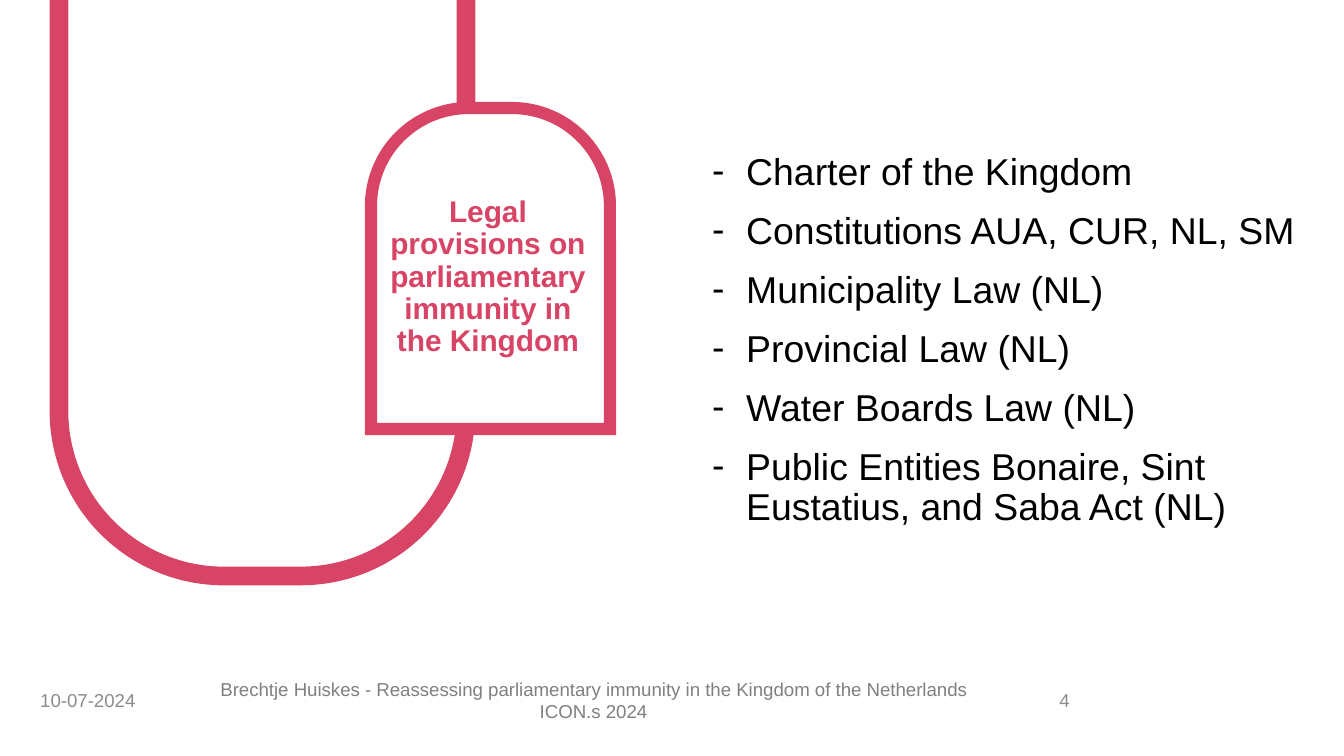
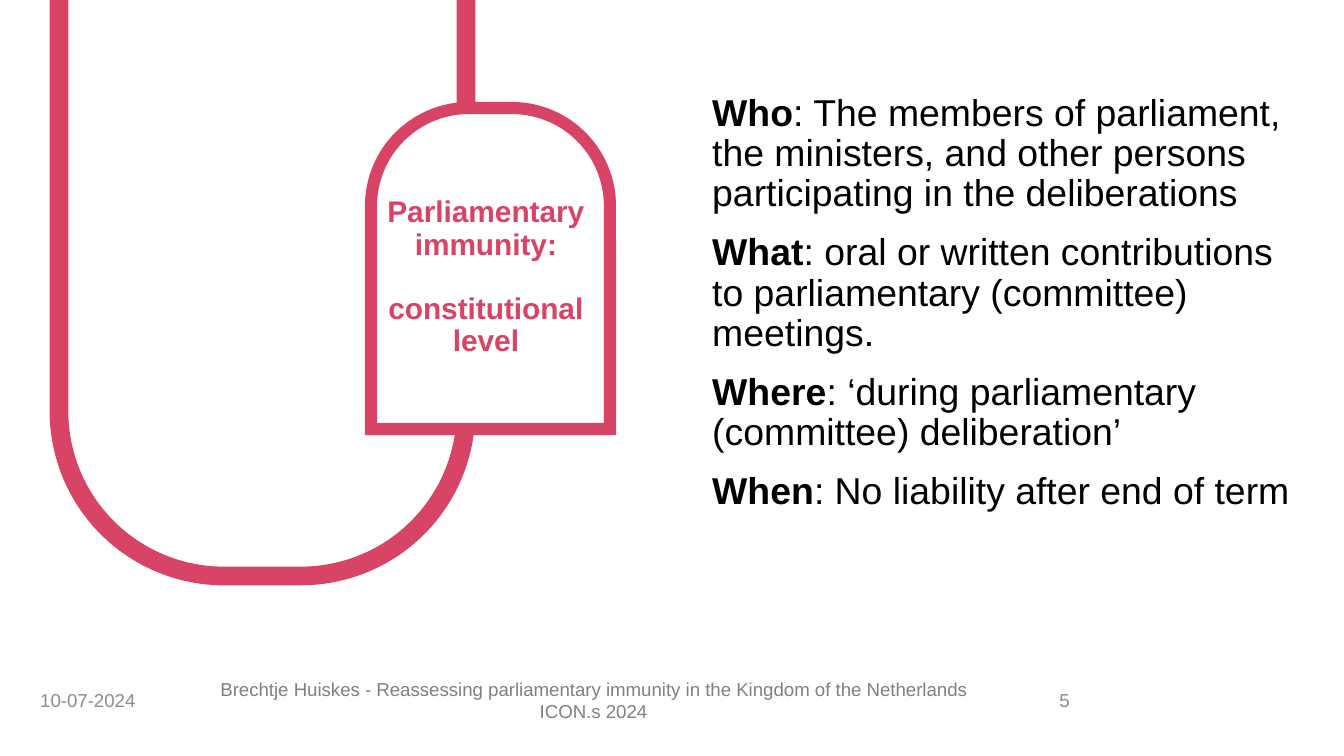
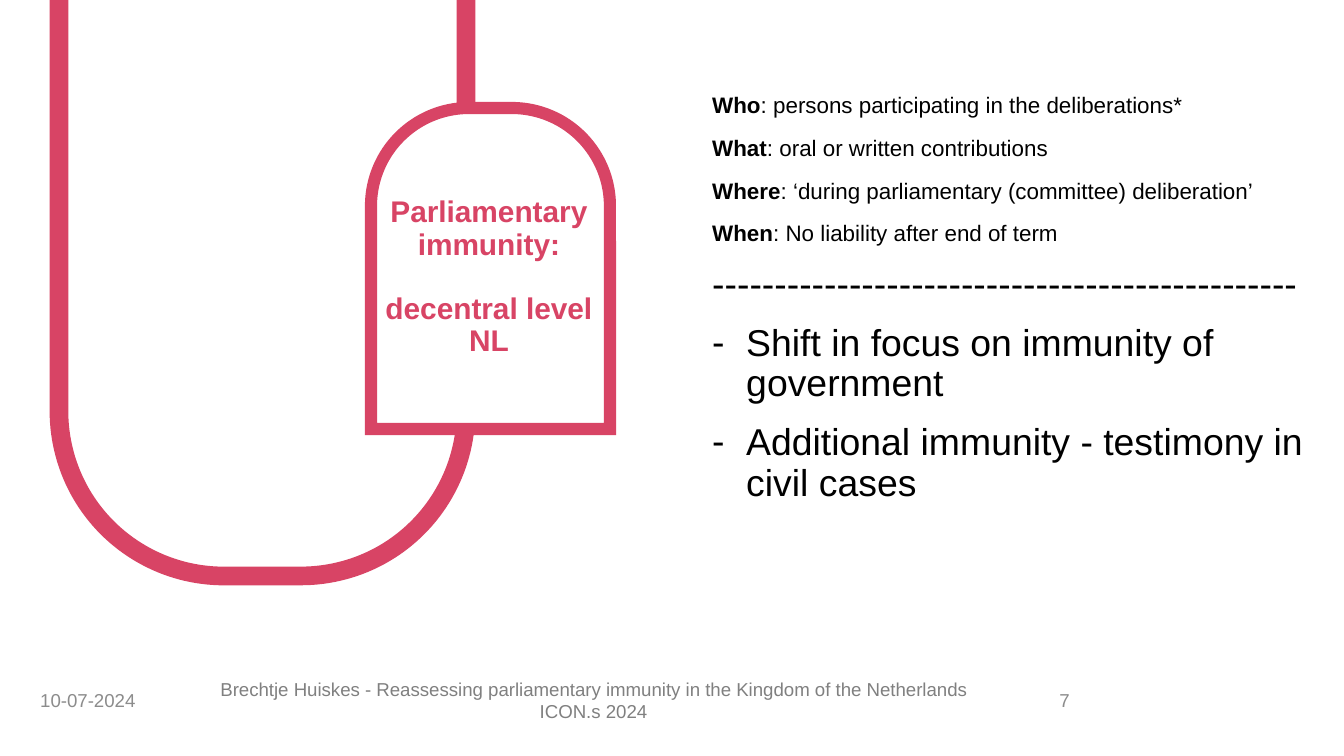
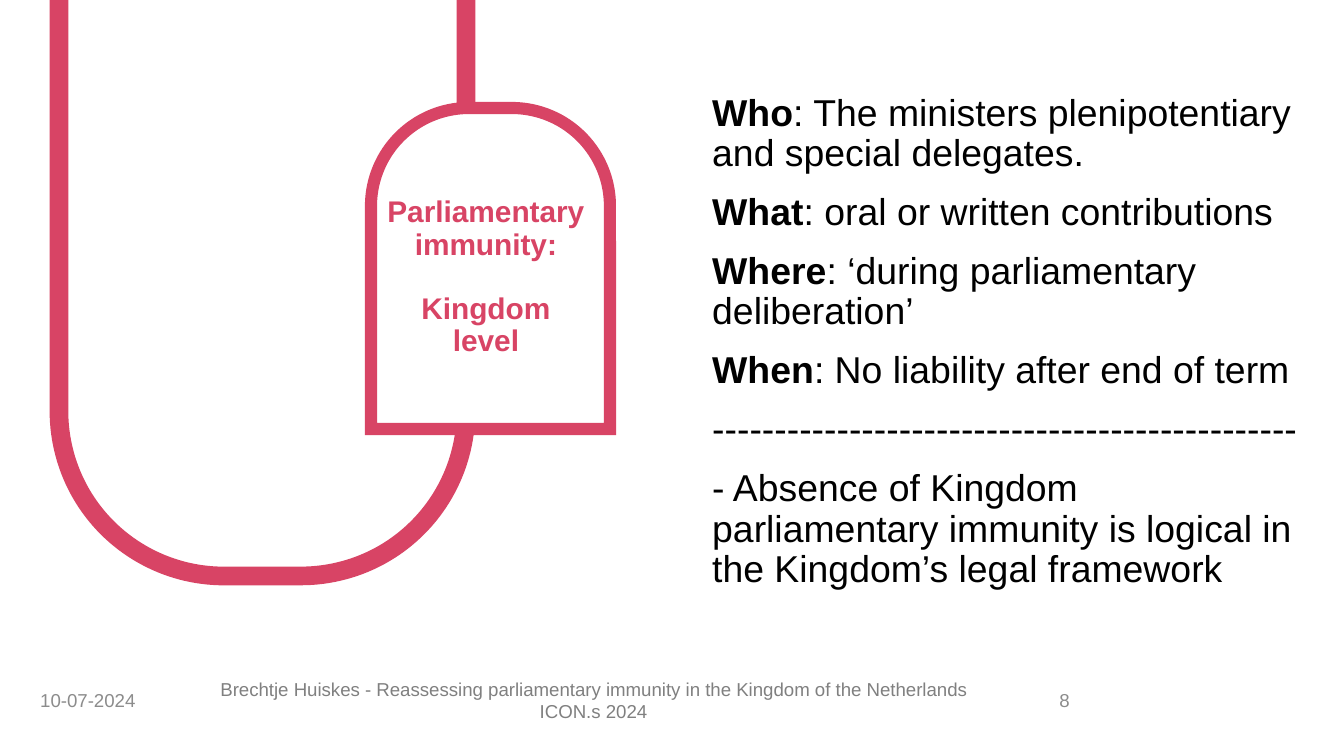
from dataclasses import dataclass

from lxml.etree import SubElement
from pptx import Presentation
from pptx.dml.color import RGBColor
from pptx.enum.shapes import MSO_SHAPE as Preset
from pptx.enum.text import MSO_ANCHOR as Anchor, MSO_AUTO_SIZE as AutoSize, PP_ALIGN as Align
from pptx.oxml.ns import qn
from pptx.util import Emu, Pt

EMU_PER_PX = 914400 / 134.4
FONT = "Arial"
RED, BLACK, WHITE = "D84465", "000000", "FFFFFF"
GREY, DATE_GREY = "808080", "8C8C8C"

SLIDE_SIZE = (1344, 756)
LOOP_BOX = (59, -30, 407, 606)
TAG_BOX = (371, 108, 239, 321)
BODY_BOX = (699, 28, 620, 582)
FOOTER_TOP, FOOTER_HEIGHT = 680, 40
BODY_INDENT = 34
INSET_TOP = 7
BODY_LINE = 59  # one 20 pt line with its space before

DATE = "10-07-2024"
FOOTER = ("Brechtje Huiskes - Reassessing parliamentary immunity "
          "in the Kingdom of the Netherlands ICON.s 2024")
DIVIDER = "-" * 47


@dataclass
class Entry:
    text: str
    term: str = ""
    size: int = 20
    bullet: bool = False


@dataclass
class Topic:
    number: int
    title: list
    title_box: tuple
    entries: list
    skipped_lines: int = 1


def px(length):
    return Emu(round(length * EMU_PER_PX))


def color(value):
    return RGBColor.from_string(value)


def place(shape, box):
    shape.left, shape.top, shape.width, shape.height = map(px, box)


def add_run(paragraph, text, size, ink, bold=False):
    run = paragraph.add_run()
    run.text = text
    font = run.font
    font.name, font.size, font.bold = FONT, Pt(size), bold
    font.color.rgb = color(ink)


def prepare_frame(shape, anchor):
    frame = shape.text_frame
    frame.word_wrap = True
    frame.auto_size = AutoSize.NONE
    frame.vertical_anchor = anchor
    return frame


def paragraphs_for(frame, items):
    """Pair each item with its own paragraph, using the first one already there."""
    for index, item in enumerate(items):
        yield index, frame.paragraphs[0] if index == 0 else frame.add_paragraph(), item


def add_outline(group, box, radii, width):
    """Rectangle with rounded top and bottom corners, given as radii in px."""
    shape = group.shapes.add_shape(Preset.ROUND_2_SAME_RECTANGLE, *map(px, box))
    for index, radius in enumerate(radii):
        shape.adjustments[index] = radius / min(box[2:])
    shape.shadow.inherit = False
    shape.line.color.rgb = color(RED)
    shape.line.width = Pt(width)
    SubElement(shape._element.spPr.find(qn("a:ln")), qn("a:miter"), lim="800000")
    return shape


def add_key_ring(slide):
    """Hanging loop and the white tag on it."""
    group = slide.shapes.add_group_shape()
    loop = add_outline(group, LOOP_BOX, (0, 165), 10)
    loop.fill.background()
    tag = add_outline(group, TAG_BOX, (98, 0), 6.5)
    tag.fill.solid()
    tag.fill.fore_color.rgb = color(WHITE)
    return group


def add_title(slide, box, blocks, below):
    title = slide.shapes.title
    place(title, box)
    below._element.addnext(title._element)  # bring the title in front of the tag
    frame = prepare_frame(title, Anchor.MIDDLE)
    for index, paragraph, lines in paragraphs_for(frame, blocks):
        paragraph.alignment = Align.CENTER
        paragraph.line_spacing = 0.9
        paragraph.space_before = Pt(17 if index else 0)
        for line_index, line in enumerate(lines):
            if line_index:
                paragraph.add_line_break()
            add_run(paragraph, line, 16, RED, bold=True)


def add_dash(paragraph):
    properties = paragraph._p.get_or_add_pPr()
    properties.set("marL", str(px(BODY_INDENT)))
    properties.set("indent", str(-px(BODY_INDENT)))
    SubElement(properties, qn("a:buFont"), typeface=FONT)
    SubElement(properties, qn("a:buChar"), char="-")


def add_body(slide, box, entries, skipped_lines):
    body = slide.shapes.add_textbox(*map(px, box))
    frame = prepare_frame(body, Anchor.TOP)
    frame.margin_top = px(INSET_TOP + skipped_lines * BODY_LINE)
    for index, paragraph, entry in paragraphs_for(frame, entries):
        if entry.bullet:
            add_dash(paragraph)
        paragraph.line_spacing = 0.9
        paragraph.space_before = Pt(10 if index else 0)
        if entry.term:
            add_run(paragraph, entry.term, entry.size, BLACK, bold=True)
        add_run(paragraph, entry.text, entry.size, BLACK)


def add_footer(slide, number):
    """Date, talk and slide number along the bottom edge."""
    for left, width, text, align, ink in (
        (27, 130, DATE, Align.LEFT, DATE_GREY),
        (183, 821, FOOTER, Align.CENTER, GREY),
        (1023, 60, str(number), Align.RIGHT, DATE_GREY),
    ):
        box = slide.shapes.add_textbox(*map(px, (left, FOOTER_TOP, width, FOOTER_HEIGHT)))
        paragraph = prepare_frame(box, Anchor.MIDDLE).paragraphs[0]
        paragraph.alignment = align
        add_run(paragraph, text, 10, ink)


def add_topic_slide(presentation, topic):
    slide = presentation.slides.add_slide(presentation.slide_layouts.get_by_name("Title Only"))
    key_ring = add_key_ring(slide)
    add_title(slide, topic.title_box, topic.title, key_ring)
    add_body(slide, BODY_BOX, topic.entries, topic.skipped_lines)
    add_footer(slide, topic.number)


def four_questions(who, what, where, size=20):
    answers = {"Who": who, "What": what, "Where": where, "When": "No liability after end of term"}
    return [Entry(f": {answer}", term, size) for term, answer in answers.items()]


def dashed(*texts):
    return [Entry(text, bullet=True) for text in texts]


IMMUNITY = ["Parliamentary", "immunity:"]
CONTRIBUTIONS = "oral or written contributions"
COMMITTEE = "‘during parliamentary (committee) deliberation’"

TOPICS = [
    Topic(
        4,
        [["Legal provisions on parliamentary immunity in the Kingdom"]],
        (376, 129, 224, 297),
        dashed(
            "Charter of the Kingdom",
            "Constitutions AUA, CUR, NL, SM",
            "Municipality Law (NL)",
            "Provincial Law (NL)",
            "Water Boards Law (NL)",
            "Public Entities Bonaire, Sint Eustatius, and Saba Act (NL)",
        ),
        skipped_lines=2,
    ),
    Topic(
        5,
        [IMMUNITY, ["constitutional", "level"]],
        (371, 129, 230, 297),
        four_questions(
            "The members of parliament, the ministers, and other persons "
            "participating in the deliberations",
            f"{CONTRIBUTIONS} to parliamentary (committee) meetings.",
            COMMITTEE,
        ),
    ),
    Topic(
        7,
        [IMMUNITY, ["decentral level", "NL"]],
        (352, 129, 274, 297),
        four_questions("persons participating in the deliberations*",
                       CONTRIBUTIONS, COMMITTEE, size=12)
        + [Entry(DIVIDER)]
        + dashed("Shift in focus on immunity of government",
                 "Additional immunity - testimony in civil cases"),
    ),
    Topic(
        8,
        [IMMUNITY, ["Kingdom", "level"]],
        (371, 129, 230, 297),
        four_questions("The ministers plenipotentiary and special delegates.",
                       CONTRIBUTIONS, "‘during parliamentary deliberation’")
        + [Entry(DIVIDER),
           Entry("- Absence of Kingdom parliamentary immunity is logical in "
                 "the Kingdom’s legal framework")],
    ),
]


def main():
    presentation = Presentation()
    presentation.slide_width, presentation.slide_height = map(px, SLIDE_SIZE)
    for topic in TOPICS:
        add_topic_slide(presentation, topic)
    presentation.save("out.pptx")


if __name__ == "__main__":
    main()
